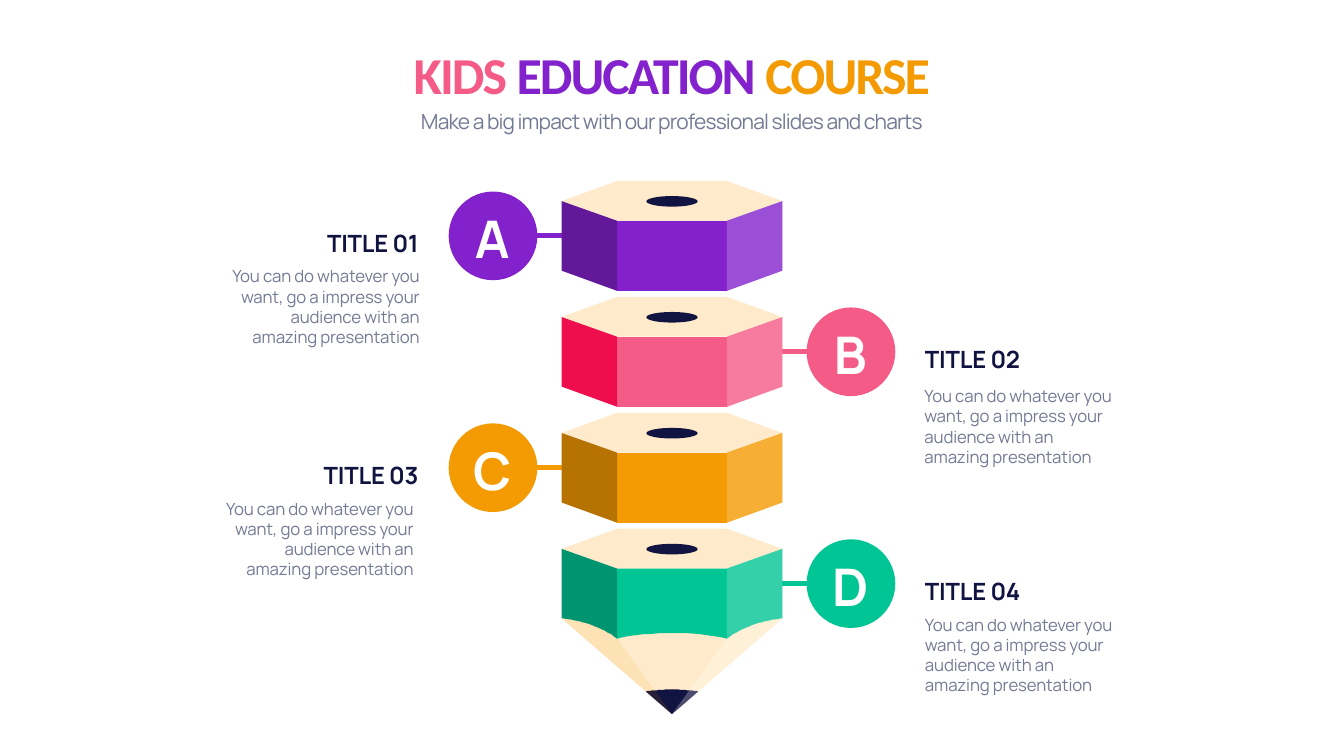
"""Builds a four-step pencil infographic for a kids education course."""
from lxml import etree
from pptx import Presentation
from pptx.dml.color import RGBColor
from pptx.enum.shapes import MSO_CONNECTOR, MSO_SHAPE
from pptx.enum.text import MSO_ANCHOR, MSO_AUTO_SIZE, PP_ALIGN
from pptx.oxml.ns import qn
from pptx.util import Pt

PX = 9144
LEFT, CENTER, RIGHT = PP_ALIGN.LEFT, PP_ALIGN.CENTER, PP_ALIGN.RIGHT
TOP, MIDDLE, BOTTOM = MSO_ANCHOR.TOP, MSO_ANCHOR.MIDDLE, MSO_ANCHOR.BOTTOM
OVAL, STRAIGHT = MSO_SHAPE.OVAL, MSO_CONNECTOR.STRAIGHT
NO_FIT = MSO_AUTO_SIZE.NONE

COLORS = {
    "purple": "8322CC", "purple_dark": "621999",
    "pink": "F55B87", "pink_dark": "EE0E4E",
    "orange": "F49A02", "orange_dark": "B77301",
    "green": "02C595", "green_dark": "019470",
    "wood": "FFEBCB", "navy": "111340", "gray": "747A94", "white": "FFFFFF",
}
AXIS = 1333
FIRST_TOP, STEP = 359, 230
BODY = ("You can do whatever you want, go a impress your "
        "audience with an amazing presentation")
SECTIONS = [
    ("A", "TITLE 01", "purple", True, 432, 523),
    ("B", "TITLE 02", "pink", False, 1824, 761),
    ("C", "TITLE 03", "orange", True, 420, 984),
    ("D", "TITLE 04", "green", False, 1825, 1214),
]


def rgb(name):
    """Return the named colour."""
    return RGBColor.from_string(COLORS[name])


def mirror(points):
    """Reflect points across the pencil axis."""
    return [(2 * AXIS - x, y) for x, y in points]


def curve(p0, p1, p2, p3, steps=24):
    """Return points along a cubic curve."""
    points = []
    for i in range(steps + 1):
        t = i / steps
        weights = ((1 - t) ** 3, 3 * t * (1 - t) ** 2, 3 * t * t * (1 - t), t ** 3)
        points.append(tuple(sum(w * p[axis] for w, p in zip(weights, (p0, p1, p2, p3)))
                            for axis in (0, 1)))
    return points


def write(frame, runs, size, font="Manrope", bold=False, spacing=0,
          align=LEFT, anchor=TOP, line=None):
    """Fill a text frame with (text, colour) runs in one format."""
    frame.word_wrap = True
    frame.auto_size = NO_FIT
    frame.vertical_anchor = anchor
    paragraph = frame.paragraphs[0]
    paragraph.alignment = align
    paragraph.space_before = Pt(0)
    if line:
        paragraph.line_spacing = Pt(line)
    for text, color in runs:
        run = paragraph.add_run()
        run.text = text
        run.font.name = font
        run.font.size = Pt(size)
        run.font.bold = bold
        run.font.color.rgb = rgb(color)
        run.font._element.set("spc", str(round(spacing * 100)))


class Canvas:
    """Draws styled elements on the current slide."""

    def __init__(self, slide):
        """Keep the slide to draw on."""
        self.slide = slide
        self.shapes = slide.shapes

    def paint(self, shape, color, opacity=None):
        """Give a shape a flat fill without line or shadow."""
        shape.shadow.inherit = False
        shape.line.fill.background()
        shape.fill.solid()
        shape.fill.fore_color.rgb = rgb(color)
        if opacity:
            srgb = shape._element.spPr.find(".//" + qn("a:srgbClr"))
            etree.SubElement(srgb, qn("a:alpha")).set("val", str(opacity * 1000))

    def oval(self, x, y, width, height, color):
        """Draw an ellipse centred on a point."""
        shape = self.shapes.add_shape(OVAL, (x - width // 2) * PX, (y - height // 2) * PX,
                                      width * PX, height * PX)
        self.paint(shape, color)

    def polygon(self, points, color, opacity=None):
        """Draw a closed outline."""
        builder = self.shapes.build_freeform(*points[0], scale=PX)
        builder.add_line_segments(points[1:], close=True)
        self.paint(builder.convert_to_shape(), color, opacity)

    def link(self, x1, x2, y, color):
        """Draw a thick horizontal connector."""
        connector = self.shapes.add_connector(STRAIGHT, x1 * PX, y * PX, x2 * PX, y * PX)
        connector.line.color.rgb = rgb(color)
        connector.line.width = Pt(6.8)
        etree.SubElement(connector._element.spPr, qn("a:effectLst"))

    def text(self, box, text, color, **style):
        """Add a text box."""
        frame = self.shapes.add_textbox(*(v * PX for v in box)).text_frame
        write(frame, [(text, color)], **style)

    def placeholder(self, index, box, runs, **style):
        """Move and fill a layout placeholder."""
        holder = self.slide.placeholders[index]
        holder.left, holder.top, holder.width, holder.height = (v * PX for v in box)
        write(holder.text_frame, runs, **style)

    def block(self, top, color, sharpened):
        """Draw one hexagonal pencil segment."""
        shoulder, front, side_end, end = top + 40, top + 79, top + 178, top + 218
        rim = [(1224, top), (1114, shoulder), (1224, front)]
        self.polygon(rim + mirror(rim)[::-1], "wood")
        self.oval(AXIS, shoulder, 102, 21, "navy")
        outer, inner = (1114, side_end), (1224, end)
        base = [inner] + mirror([inner])
        side_edge = [outer, inner]
        if sharpened:
            side_edge = curve(outer, outer, (1175, side_end + 3), inner)
            base = curve(inner, inner, (1327, end - 25), base[1])
        side = [(1224, front), (1114, shoulder)] + side_edge
        self.polygon(base + mirror([(1224, front)]) + [(1224, front)], color)
        self.polygon(mirror(side), color)
        self.polygon(side, color + "_dark")
        self.polygon(mirror(side), "white", 20)

    def tip(self, top):
        """Draw the sharpened wood and the lead."""
        bottom = top + 190
        point = (AXIS, bottom)
        lead = (1281, bottom - 45)
        self.polygon([(1114, top), point] + mirror([(1114, top)]), "wood")
        self.polygon(curve(lead, (1313, bottom - 50), (1353, bottom - 50),
                           mirror([lead])[0]) + [point], "navy")
        facet = [(1224, top + 40), point, (1114, top), (1224, top)]
        self.polygon(mirror(facet), "white", 25)
        self.polygon(facet, "orange", 10)

    def section(self, row, letter, title, color, on_left, body_x, body_y):
        """Draw one pencil segment with its badge and texts."""
        top = FIRST_TOP + row * STEP
        middle = top + 109
        badge_x = 978 if on_left else 1688
        align = RIGHT if on_left else LEFT
        self.link(*((1064, 1114) if on_left else (1552, 1602)), middle, color)
        self.oval(badge_x, middle, 176, 176, color)
        self.text((badge_x - 68, top + 46, 133, 135), letter, "white", size=74, bold=True,
                  spacing=-2.9, align=CENTER, anchor=MIDDLE)
        self.text((331 if on_left else 1825, top + 90, 509, 67), title, "navy", size=34,
                  bold=True, spacing=-0.3, align=align, anchor=BOTTOM)
        self.text((body_x, body_y, 410, 172), BODY, "gray", size=24, spacing=-0.2, align=align)
        sharpened = row == len(SECTIONS) - 1
        if sharpened:
            self.tip(top + 178)
        self.block(top, color, sharpened)


def main():
    """Build and save the slide."""
    deck = Presentation()
    deck.slide_width, deck.slide_height = 2666 * PX, 1500 * PX
    canvas = Canvas(deck.slides.add_slide(deck.slide_layouts[0]))
    canvas.placeholder(0, (166, 76, 2333, 138),
                       [("KIDS ", "pink"), ("EDUCATION", "purple"), (" COURSE", "orange")],
                       size=74, font="Calibri", bold=True, spacing=-2.9, align=CENTER,
                       anchor=BOTTOM, line=94)
    canvas.placeholder(1, (166, 201, 2333, 66),
                       [("Make a big impact with our professional slides and charts", "gray")],
                       size=30, spacing=-1.2, align=CENTER, line=42)
    for row, section in enumerate(SECTIONS):
        canvas.section(row, *section)
    deck.save("out.pptx")


if __name__ == "__main__":
    main()
